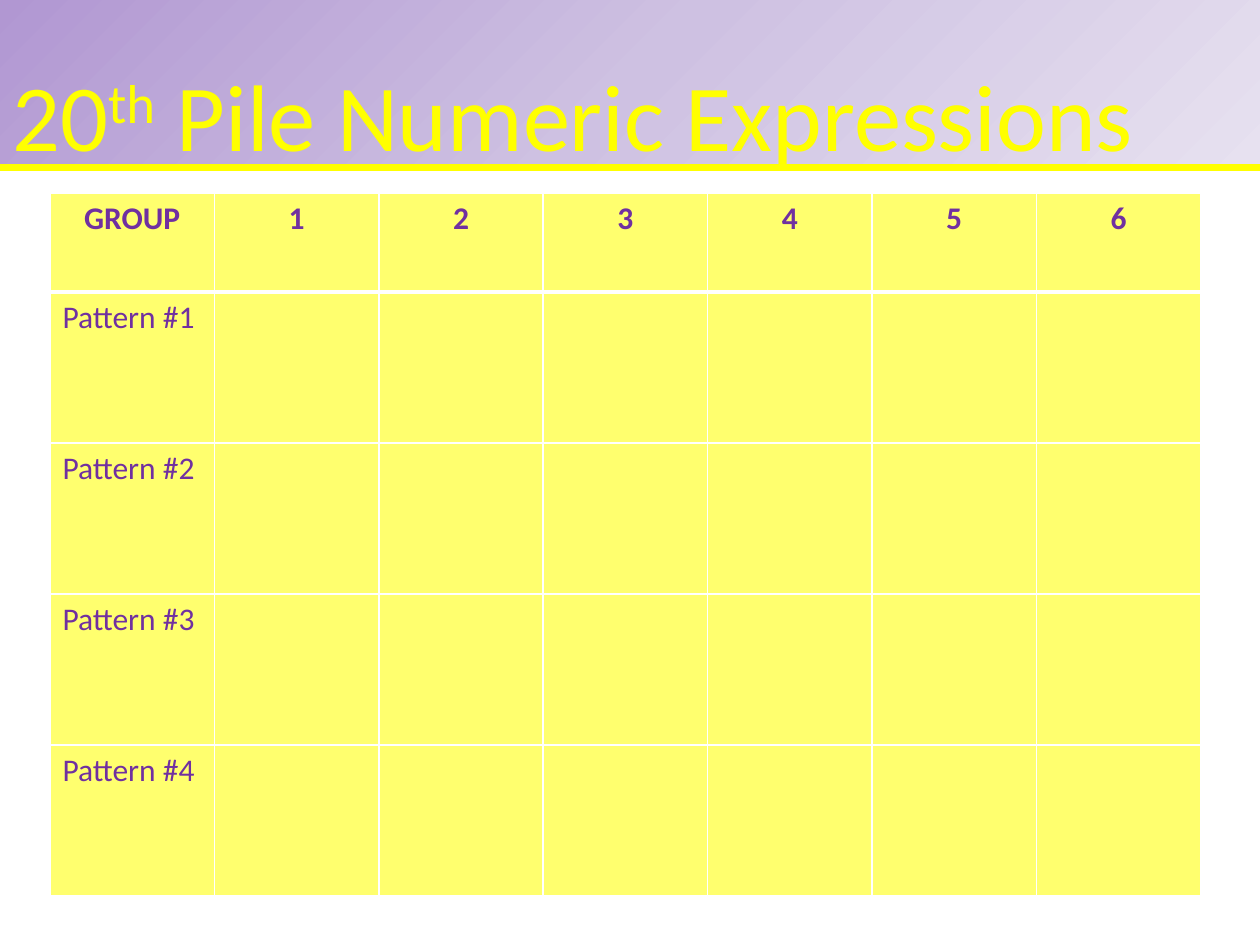
from dataclasses import dataclass

import pptx
import pptx.dml.color
import pptx.enum.shapes
import pptx.enum.text
import pptx.oxml
import pptx.oxml.ns
import pptx.util
from copy import deepcopy

qn = pptx.oxml.ns.qn
EMU_PER_PX = 914400 / 126


@dataclass(frozen=True)
class Theme:
    font: str = "Calibri"
    title_size: int = 54
    table_size: int = 18
    yellow: str = "FFFF00"
    purple: str = "7030A0"
    white: str = "FFFFFF"
    banner: tuple = ((0, "B197D2"), (0.5, "CEC1E2"), (1, "E7E1F0"))
    cell_alpha: int = 57
    rule_width: int = 4
    grid_width: int = 1
    header_width: int = 3


@dataclass(frozen=True)
class Box:
    left: int
    top: int
    width: int
    height: int


@dataclass(frozen=True)
class TitlePart:
    text: str
    superscript: bool = False


THEME = Theme()
BANNER = Box(0, 0, 1260, 168)
TITLE_TOP = 57
GRID = Box(50, 193, 1151, 703)
HEADER_HEIGHT = 99
TITLE = [TitlePart("20"), TitlePart("th", True), TitlePart(" Pile Numeric Expressions")]
GROUPS = ["GROUP"] + [str(number) for number in range(1, 7)]
PATTERNS = [f"Pattern #{number}" for number in range(1, 5)]


def px(length: float) -> pptx.util.Emu:
    return pptx.util.Emu(round(length * EMU_PER_PX))


def rgb(value: str) -> pptx.dml.color.RGBColor:
    return pptx.dml.color.RGBColor.from_string(value)


def place(box: Box) -> tuple:
    return px(box.left), px(box.top), px(box.width), px(box.height)


def add_run(paragraph, text: str, size: int, color: str, bold: bool = False):
    run = paragraph.add_run()
    run.text = text
    run.font.name = THEME.font
    run.font.size = pptx.util.Pt(size)
    run.font.bold = bold
    run.font.color.rgb = rgb(color)
    return run


def add_banner(slide) -> None:
    banner = slide.shapes.add_shape(
        pptx.enum.shapes.MSO_SHAPE.RECTANGLE, *place(BANNER))
    banner.shadow.inherit = False
    banner.line.fill.background()

    # Three-stop diagonal gradient
    banner.fill.gradient()
    banner.fill.gradient_angle = 315
    stops = banner._element.spPr.find(".//" + qn("a:gsLst"))
    stops.append(deepcopy(stops[0]))
    for stop, (position, color) in zip(banner.fill.gradient_stops, THEME.banner):
        stop.position = position
        stop.color.rgb = rgb(color)

    # Title text
    frame = banner.text_frame
    frame.word_wrap = True
    frame.vertical_anchor = pptx.enum.text.MSO_ANCHOR.TOP
    frame.margin_top, frame.margin_bottom = px(TITLE_TOP), 0
    title = frame.paragraphs[0]
    title.alignment = pptx.enum.text.PP_ALIGN.LEFT
    for part in TITLE:
        run = add_run(title, part.text, THEME.title_size, THEME.yellow)
        if part.superscript:
            run._r.get_or_add_rPr().set("baseline", "30000")


def add_rule(slide) -> None:
    rule = slide.shapes.add_connector(
        pptx.enum.shapes.MSO_CONNECTOR.STRAIGHT,
        0, px(BANNER.height), px(BANNER.width), px(BANNER.height))
    rule.line.color.rgb = rgb(THEME.yellow)
    rule.line.width = pptx.util.Pt(THEME.rule_width)
    rule._element.spPr.append(pptx.oxml.parse_xml(
        f'<a:effectLst {pptx.oxml.ns.nsdecls("a")}/>'))


def style_cell(cell, top_width: int, bottom_width: int) -> None:
    cell.fill.solid()
    cell.fill.fore_color.rgb = rgb(THEME.yellow)
    properties = cell._tc.get_or_add_tcPr()
    color = properties.find(".//" + qn("a:srgbClr"))
    color.append(pptx.oxml.parse_xml(
        f'<a:alpha {pptx.oxml.ns.nsdecls("a")} val="{THEME.cell_alpha * 1000}"/>'))

    # Borders come before the fill in the cell properties
    borders = (("L", THEME.grid_width), ("R", THEME.grid_width),
               ("T", top_width), ("B", bottom_width))
    for index, (side, width) in enumerate(borders):
        properties.insert(index, pptx.oxml.parse_xml(
            f'<a:ln{side} {pptx.oxml.ns.nsdecls("a")} w="{pptx.util.Pt(width)}">'
            f'<a:solidFill><a:srgbClr val="{THEME.white}"/></a:solidFill>'
            f'</a:ln{side}>'))


def add_pattern_table(slide) -> None:
    table = slide.shapes.add_table(
        len(PATTERNS) + 1, len(GROUPS), *place(GRID)).table
    table.horz_banding = False
    for column in table.columns:
        column.width = px(GRID.width / len(GROUPS))
    for index, row in enumerate(table.rows):
        row.height = px((GRID.height - HEADER_HEIGHT) / len(PATTERNS)
                        if index else HEADER_HEIGHT)
        for cell in row.cells:
            style_cell(cell,
                       THEME.header_width if index == 1 else THEME.grid_width,
                       THEME.header_width if index == 0 else THEME.grid_width)

    # Group headings, then pattern labels
    for index, group in enumerate(GROUPS):
        heading = table.cell(0, index).text_frame.paragraphs[0]
        heading.alignment = pptx.enum.text.PP_ALIGN.CENTER
        add_run(heading, group, THEME.table_size, THEME.purple, bold=True)
    for index, pattern in enumerate(PATTERNS, start=1):
        label = table.cell(index, 0).text_frame.paragraphs[0]
        add_run(label, pattern, THEME.table_size, THEME.purple)


def main() -> None:
    presentation = pptx.Presentation()
    presentation.slide_width, presentation.slide_height = px(1260), px(945)
    slide = presentation.slides.add_slide(presentation.slide_layouts[6])
    add_banner(slide)
    add_rule(slide)
    add_pattern_table(slide)
    presentation.save("out.pptx")


if __name__ == "__main__":
    main()
